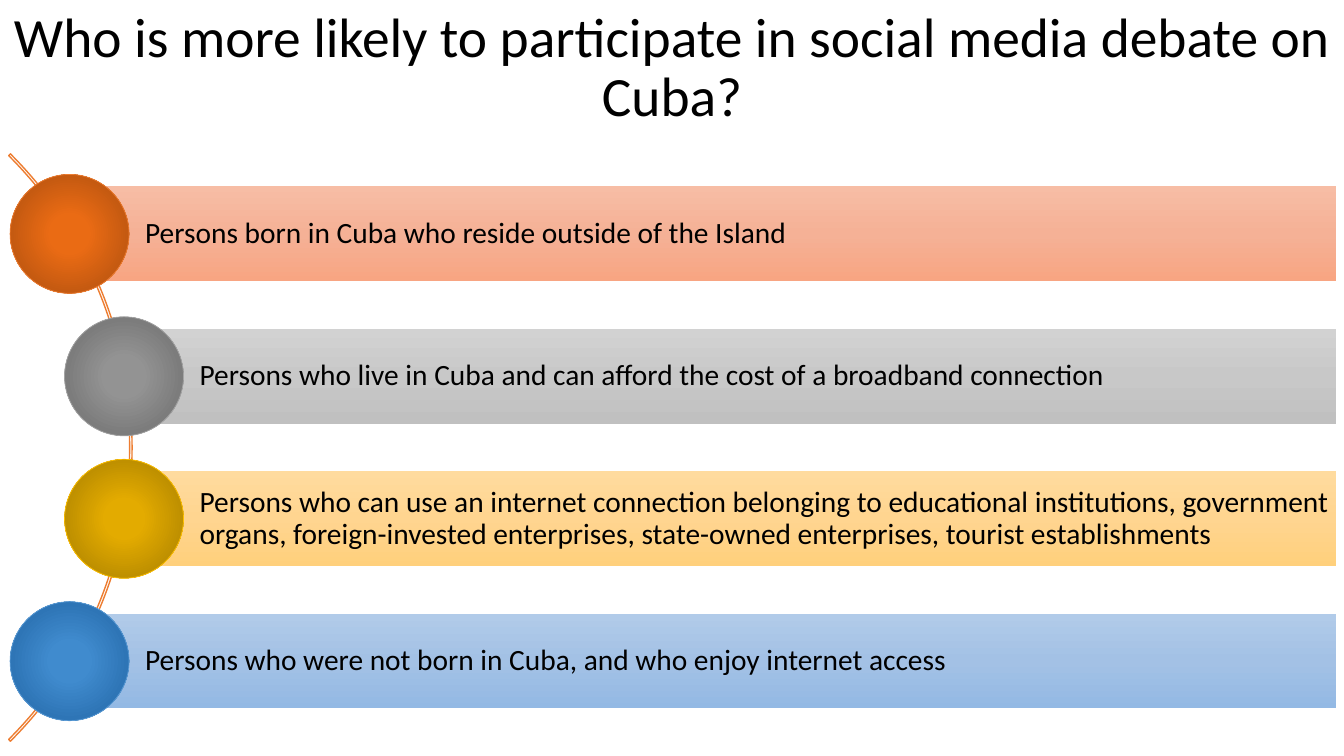
from lxml import etree
from pptx import Presentation
from pptx.dml.color import RGBColor
from pptx.enum.shapes import MSO_SHAPE
from pptx.enum.text import MSO_ANCHOR, MSO_AUTO_SIZE, PP_ALIGN
from pptx.oxml.ns import qn
from pptx.util import Inches, Pt

ARC, BAR, CIRCLE = MSO_SHAPE.BLOCK_ARC, MSO_SHAPE.RECTANGLE, MSO_SHAPE.OVAL
MIDDLE = MSO_ANCHOR.MIDDLE
CENTER, LEFT = PP_ALIGN.CENTER, PP_ALIGN.LEFT
NO_AUTOFIT = MSO_AUTO_SIZE.NONE

TITLE = "Who is more likely to participate in social media debate on Cuba?"
GROUPS = [
    ("Persons born in Cuba who reside outside of the Island",
     0.69, ("F7BDA5", "F5B196", "F8A582"), ("EA6B14", "C55A11", "B85410"), "ED7D31"),
    ("Persons who live in Cuba and can afford the cost of a broadband connection",
     1.23, ("D2D2D2", "C8C8C8", "C0C0C0"), ("939393", "7C7C7C", "747474"), "A5A5A5"),
    ("Persons who can use an internet connection belonging to educational "
     "institutions, government organs, foreign-invested enterprises, "
     "state-owned enterprises, tourist establishments",
     1.23, ("FFDB9E", "FFD590", "FFD07C"), ("E3AB00", "BF9000", "B28600"), "FFC000"),
    ("Persons who were not born in Cuba, and who enjoy internet access",
     0.69, ("B1CBE9", "A3C1E5", "93B9E4"), ("408BCE", "2E75B6", "2B6DA9"), "5B9BD5"),
]
ARC_COLOR = "ED7D31"
ARC_SIZE = 8.24
ARC_ADJUSTMENTS = (189, 27, 0.003)
ARC_CENTER_X, ARC_CENTER_Y = -2.81, 4.44
PITCH = 1.413
BAR_RIGHT, BAR_HEIGHT = 13.25, 0.94
CIRCLE_SIZE = 1.18
BAR_INSETS = {"margin_left": 0.75, "margin_right": 0.06,
              "margin_top": 0.06, "margin_bottom": 0.06}


def color(value):
    return RGBColor.from_string(value)


def add_part(slide, kind, left, top, width, height, outline=None, weight=0):
    part = slide.shapes.add_shape(
        kind, Inches(left), Inches(top), Inches(width), Inches(height))
    part.shadow.inherit = False
    part.fill.background()
    if outline:
        part.line.color.rgb = color(outline)
        part.line.width = Pt(weight)
    else:
        part.line.fill.background()
    return part


def set_gradient(part, stops, radial):
    gradient = etree.Element(qn("a:gradFill"), rotWithShape="1")
    stop_list = etree.SubElement(gradient, qn("a:gsLst"))
    for percent, value in stops:
        stop = etree.SubElement(stop_list, qn("a:gs"), pos=str(percent * 1000))
        etree.SubElement(stop, qn("a:srgbClr"), val=value)
    if radial:
        focus = etree.SubElement(gradient, qn("a:path"), path="circle")
        etree.SubElement(focus, qn("a:fillToRect"),
                         l="50000", t="50000", r="50000", b="50000")
    else:
        etree.SubElement(gradient, qn("a:lin"), ang="5400000", scaled="0")
    properties = part.element.spPr
    properties.replace(properties.find(qn("a:noFill")), gradient)


def write(frame, text, size, alignment):
    frame.word_wrap = True
    frame.auto_size = NO_AUTOFIT
    frame.vertical_anchor = MIDDLE
    paragraph = frame.paragraphs[0]
    paragraph.alignment = alignment
    paragraph.line_spacing = 0.9
    run = paragraph.add_run()
    run.text = text
    for name, value in {"name": "Calibri", "size": Pt(size)}.items():
        setattr(run.font, name, value)
    run.font.color.rgb = color("000000")


def add_group(slide, center_y, text, center_x, bar_colors, circle_colors, outline):
    bar = add_part(slide, BAR, center_x, center_y - BAR_HEIGHT / 2,
                   BAR_RIGHT - center_x, BAR_HEIGHT)
    set_gradient(bar, zip((0, 50, 100), bar_colors), radial=False)
    for name, value in BAR_INSETS.items():
        setattr(bar.text_frame, name, Inches(value))
    write(bar.text_frame, text, 21, LEFT)

    circle = add_part(slide, CIRCLE, center_x - CIRCLE_SIZE / 2,
                      center_y - CIRCLE_SIZE / 2, CIRCLE_SIZE, CIRCLE_SIZE,
                      outline, 0.5)
    inner, middle, outer = circle_colors
    set_gradient(circle, [(0, inner), (23, inner), (69, middle), (97, outer)],
                 radial=True)


def main():
    deck = Presentation()
    deck.slide_width, deck.slide_height = Inches(13.33), Inches(7.5)
    slide = deck.slides.add_slide(deck.slide_layouts[5])

    title = slide.shapes.title
    title.left, title.top = Inches(0), Inches(0)
    title.width, title.height = deck.slide_width, Inches(1.37)
    write(title.text_frame, TITLE, 39.6, CENTER)

    arc = add_part(slide, ARC, ARC_CENTER_X - ARC_SIZE / 2,
                   ARC_CENTER_Y - ARC_SIZE / 2, ARC_SIZE, ARC_SIZE, ARC_COLOR, 1)
    for index, value in enumerate(ARC_ADJUSTMENTS):
        arc.adjustments[index] = value

    first_y = ARC_CENTER_Y - PITCH * (len(GROUPS) - 1) / 2
    for index, group in enumerate(GROUPS):
        add_group(slide, first_y + index * PITCH, *group)

    deck.save("out.pptx")


if __name__ == "__main__":
    main()
